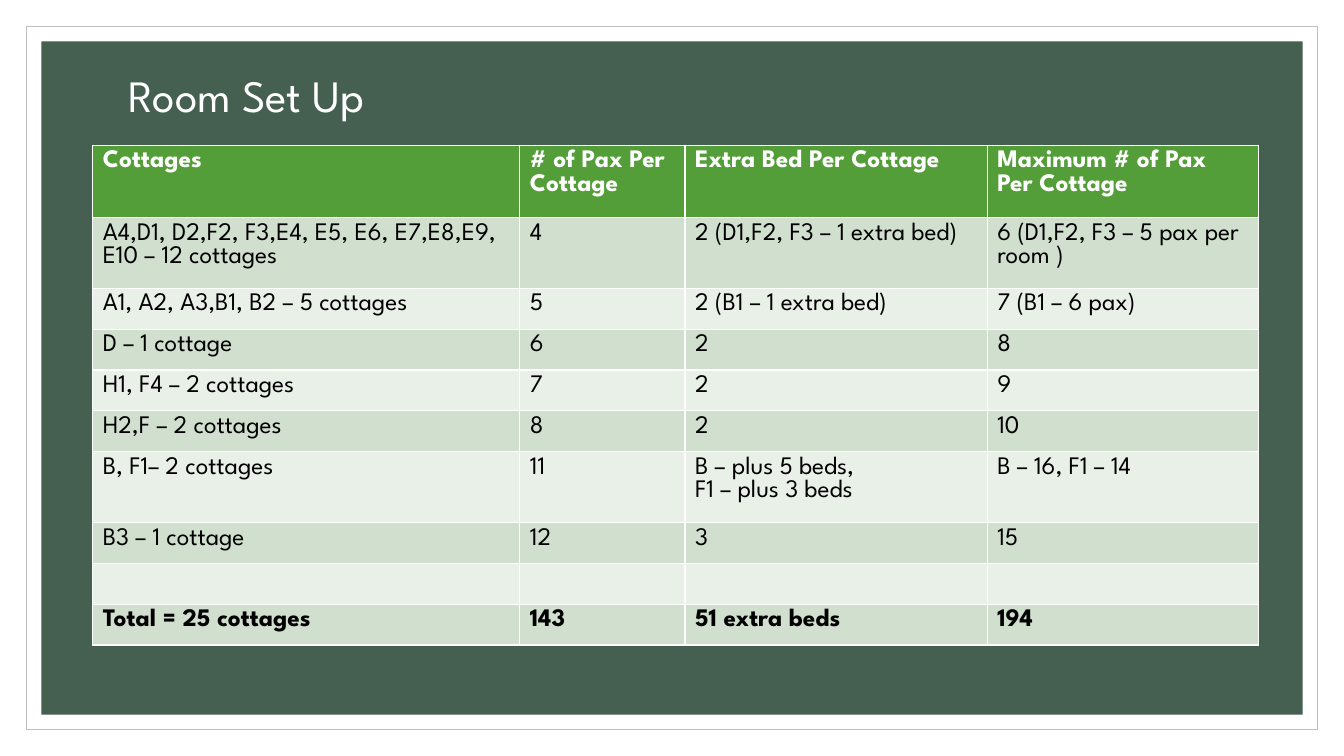
from dataclasses import dataclass

from pptx import Presentation
from pptx.dml.color import RGBColor
from pptx.enum.shapes import MSO_SHAPE
from pptx.enum.text import MSO_ANCHOR, MSO_AUTO_SIZE, PP_ALIGN
from pptx.util import Inches, Pt

RECTANGLE = MSO_SHAPE.RECTANGLE
MIDDLE, TOP = MSO_ANCHOR.MIDDLE, MSO_ANCHOR.TOP
LEFT = PP_ALIGN.LEFT
NO_FIT = MSO_AUTO_SIZE.NONE
TITLE_ONLY = 5


@dataclass(frozen=True)
class Theme:
    font: str = "League Spartan"
    title_size: int = 32
    table_size: int = 18
    white: str = "FFFFFF"
    black: str = "000000"
    frame_line: str = "BFBFBF"
    panel: str = "455F51"
    header: str = "549E39"
    bands: tuple = ("D1DFCE", "E9F0E8")


HEADINGS = ("Cottages", "# of Pax Per Cottage", "Extra Bed Per Cottage",
            "Maximum # of Pax Per Cottage")
COTTAGES = (
    ("A4,D1, D2,F2, F3,E4, E5, E6, E7,E8,E9, E10 – 12 cottages", "4",
     "2 (D1,F2, F3 – 1 extra bed)", "6 (D1,F2, F3 – 5 pax per room )"),
    ("A1, A2, A3,B1, B2 – 5 cottages", "5", "2 (B1 – 1 extra bed)", "7 (B1 – 6 pax)"),
    ("D – 1 cottage", "6", "2", "8"),
    ("H1, F4 – 2 cottages", "7", "2", "9"),
    ("H2,F – 2 cottages", "8", "2", "10"),
    ("B, F1– 2 cottages", "11", "B – plus 5 beds,\vF1 – plus 3 beds", "B – 16, F1 – 14"),
    ("B3 – 1 cottage", "12", "3", "15"),
    ("", "", "", ""),
)
TOTAL = ("Total = 25 cottages", "143", "51 extra beds", "194")
COLUMN_WEIGHTS = (4.24, 1.64, 3, 2.69)
# Two-line rows are taller than one-line rows.
ROW_WEIGHTS = (1.77, 1.73, 1, 1, 1, 1, 1.73, 1, 1, 1)


class SlideBuilder:
    def __init__(self, presentation, theme):
        self.theme = theme
        self.width = presentation.slide_width
        self.height = presentation.slide_height
        self.slide = presentation.slides.add_slide(presentation.slide_layouts[TITLE_ONLY])

    def box(self, left, top, width, height):
        """Turn percentages of the slide into lengths."""
        return (int(self.width * left / 100), int(self.height * top / 100),
                int(self.width * width / 100), int(self.height * height / 100))

    def style(self, paragraph, size, color, bold=False):
        font = paragraph.font
        font.name, font.size, font.bold = self.theme.font, Pt(size), bold
        font.color.rgb = RGBColor.from_string(color)

    def backdrop(self, inset, fill, line=None):
        """Add a rectangle behind the title, inset equally on all sides."""
        margin = int(self.width * inset / 100)
        shape = self.slide.shapes.add_shape(
            RECTANGLE, margin, margin, self.width - 2 * margin, self.height - 2 * margin)
        shape.shadow.inherit = False
        shape.fill.solid()
        shape.fill.fore_color.rgb = RGBColor.from_string(fill)
        if line:
            shape.line.color.rgb = RGBColor.from_string(line)
            shape.line.width = Pt(0.5)
        else:
            shape.line.fill.background()
        self.slide.shapes.title.element.addprevious(shape.element)

    def title(self, text, *area):
        title = self.slide.shapes.title
        title.left, title.top, title.width, title.height = self.box(*area)
        frame = title.text_frame
        frame.text = text
        frame.auto_size = NO_FIT
        frame.vertical_anchor = MIDDLE
        paragraph = frame.paragraphs[0]
        paragraph.alignment = LEFT
        paragraph.line_spacing = 0.9
        self.style(paragraph, self.theme.title_size, self.theme.white)

    def table(self, rows, column_weights, row_weights, *area):
        """Add a banded table with a header row and a bold last row."""
        left, top, width, height = self.box(*area)
        table = self.slide.shapes.add_table(
            len(rows), len(column_weights), left, top, width, height).table
        for column, weight in zip(table.columns, column_weights):
            column.width = int(width * weight / sum(column_weights))
        for row, weight in zip(table.rows, row_weights):
            row.height = int(height * weight / sum(row_weights))
        last = len(rows) - 1
        for index, texts in enumerate(rows):
            header = index == 0
            fill = self.theme.header if header else self.theme.bands[(index - 1) % 2]
            color = self.theme.white if header else self.theme.black
            for cell, text in zip(table.rows[index].cells, texts):
                cell.text = text
                cell.vertical_anchor = TOP
                cell.fill.solid()
                cell.fill.fore_color.rgb = RGBColor.from_string(fill)
                self.style(cell.text_frame.paragraphs[0], self.theme.table_size,
                           color, index in (0, last))


def main():
    presentation = Presentation()
    presentation.slide_width, presentation.slide_height = Inches(13.33), Inches(7.5)
    theme = Theme()
    builder = SlideBuilder(presentation, theme)
    builder.backdrop(1.95, theme.white, theme.frame_line)
    builder.backdrop(3.08, theme.panel)
    builder.title("Room Set Up", 8.78, 8, 79.67, 9.87)
    builder.table((HEADINGS, *COTTAGES, TOTAL), COLUMN_WEIGHTS, ROW_WEIGHTS,
                  6.9, 19.2, 86.72, 66.13)
    presentation.save("out.pptx")


if __name__ == "__main__":
    main()
